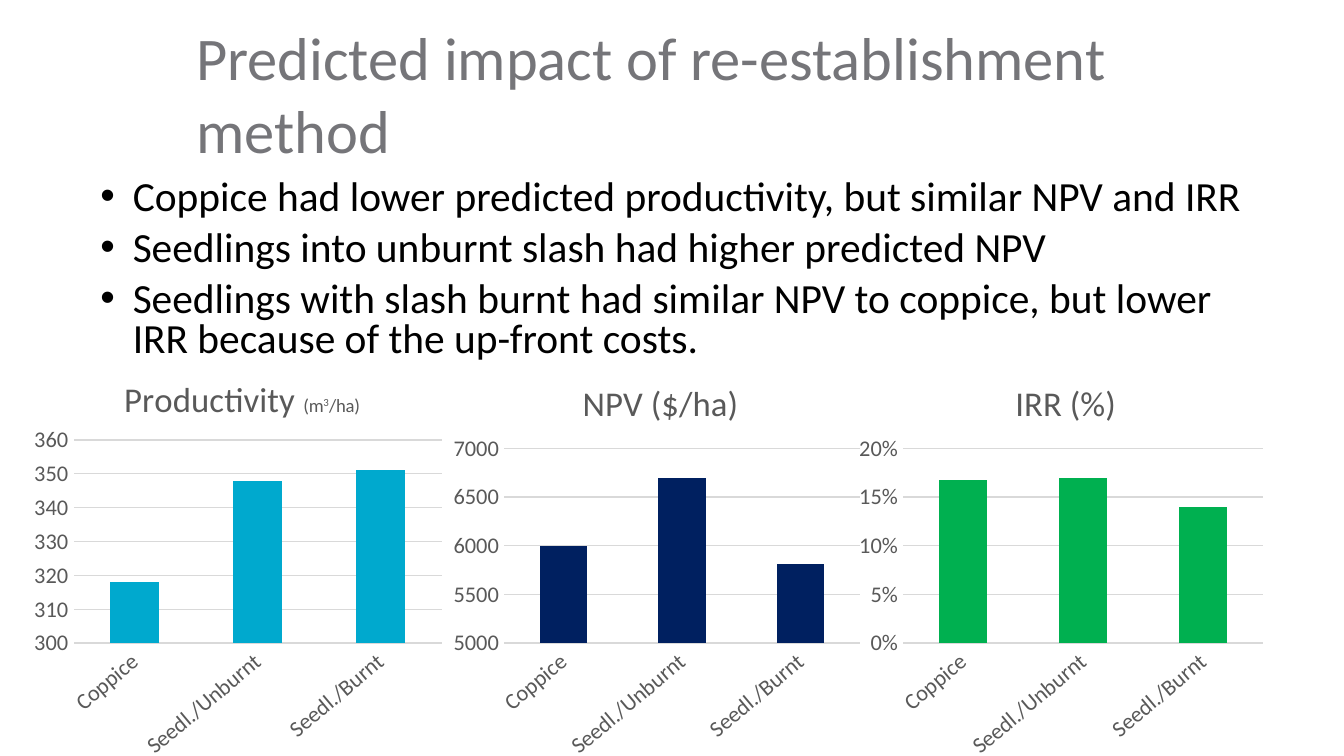
from dataclasses import dataclass

from lxml.etree import SubElement
from pptx import Presentation
from pptx.chart.data import CategoryChartData
from pptx.dml.color import RGBColor
from pptx.enum.chart import XL_CHART_TYPE as ChartType, XL_TICK_MARK as Tick
from pptx.oxml.ns import qn
from pptx.util import Cm, Pt


@dataclass(frozen=True)
class Theme:
    font: str = "Calibri"
    heading: str = "757579"
    body: str = "000000"
    label: str = "595959"
    grid: str = "D9D9D9"
    teal: str = "00A9CE"
    navy: str = "002060"
    green: str = "00B050"
    heading_size: float = 32.4
    body_size: float = 22.2
    chart_title_size: float = 18.6
    unit_size: float = 10
    label_size: float = 12


class SlideBuilder:
    def __init__(self, slide, theme):
        self.slide = slide
        self.theme = theme

    def style(self, font, size, color):
        font.name = self.theme.font
        font.size = Pt(size)
        font.bold = False
        font.color.rgb = RGBColor.from_string(color)

    def text_frame(self, left, top, width, height):
        box = self.slide.shapes.add_textbox(Cm(left), Cm(top), Cm(width), Cm(height))
        frame = box.text_frame
        frame.word_wrap = True
        frame.margin_left = frame.margin_right = 0
        frame.margin_top = frame.margin_bottom = 0
        return frame

    def heading(self, wording, *place):
        paragraph = self.text_frame(*place).paragraphs[0]
        paragraph.text = wording
        self.style(paragraph.font, self.theme.heading_size, self.theme.heading)

    def bullets(self, points, *place):
        frame = self.text_frame(*place)
        for index, point in enumerate(points):
            paragraph = frame.add_paragraph() if index else frame.paragraphs[0]
            paragraph.text = point
            paragraph.line_spacing = 0.8
            if index:
                paragraph.space_before = Pt(6)
            properties = paragraph._p.get_or_add_pPr()
            properties.set("marL", str(Cm(0.61)))
            properties.set("indent", str(Cm(-0.61)))
            SubElement(properties, qn("a:buFont"), typeface="Arial")
            SubElement(properties, qn("a:buChar"), char="•")
            self.style(paragraph.font, self.theme.body_size, self.theme.body)

    def arrange(self, part, index, inner=False, **fractions):
        layout = part.find(qn("c:layout"))
        if layout is None:
            layout = part.makeelement(qn("c:layout"))
            part.insert(index, layout)
        manual = SubElement(layout, qn("c:manualLayout"))
        if inner:
            SubElement(manual, qn("c:layoutTarget"), val="inner")
        for side in ("x", "y"):
            SubElement(manual, qn(f"c:{side}Mode"), val="edge")
        for side, fraction in fractions.items():
            SubElement(manual, qn(f"c:{side}"), val=str(fraction))

    def chart_title(self, chart, title_runs, left):
        paragraph = chart.chart_title.text_frame.paragraphs[0]
        for wording, size, baseline in title_runs:
            run = paragraph.add_run()
            run.text = wording
            self.style(run.font, size, self.theme.label)
            if baseline:
                run.font._element.set("baseline", str(baseline))
        chart.chart_title.include_in_layout = False
        self.arrange(chart.chart_title._element, 1, x=left, y=0.06)

    def axis(self, axis):
        axis.major_tick_mark = axis.minor_tick_mark = Tick.NONE
        axis.format.line.fill.background()
        self.style(axis.tick_labels.font, self.theme.label_size, self.theme.label)

    def columns(self, title_runs, title_left, values, color, scale, left, plot, number_format="General"):
        data = CategoryChartData()
        data.categories = ["Coppice", "Seedl./Unburnt", "Seedl./Burnt"]
        data.add_series("Series 1", values)
        chart = self.slide.shapes.add_chart(
            ChartType.COLUMN_CLUSTERED, Cm(left), Cm(6.55), Cm(8), Cm(8), data
        ).chart
        self.style(chart.font, 10, self.theme.body)
        chart.has_legend = False
        self.chart_title(chart, title_runs, title_left)

        bars = chart.plots[0]
        bars.gap_width = 150
        bars.vary_by_categories = False
        fill = bars.series[0].format.fill
        fill.solid()
        fill.fore_color.rgb = RGBColor.from_string(color)

        self.axis(chart.category_axis)
        label_body = chart.category_axis._element.find(qn("c:txPr")).find(qn("a:bodyPr"))
        label_body.set("rot", str(-40 * 60000))

        amounts = chart.value_axis
        self.axis(amounts)
        amounts.minimum_scale, amounts.maximum_scale, amounts.major_unit = scale
        amounts.tick_labels.number_format = number_format
        amounts.tick_labels.number_format_is_linked = False
        amounts.has_major_gridlines = True
        grid = amounts.major_gridlines.format.line
        grid.width = Pt(0.75)
        grid.color.rgb = RGBColor.from_string(self.theme.grid)

        x, y, w, h = plot
        plot_area = chart._chartSpace.chart.plotArea
        self.arrange(plot_area, 0, inner=True, x=x, y=y, w=w, h=h)


def main():
    deck = Presentation()
    deck.slide_width, deck.slide_height = Cm(25.4), Cm(14.28)
    theme = Theme()
    builder = SlideBuilder(deck.slides.add_slide(deck.slide_layouts[6]), theme)

    builder.heading("Predicted impact of re-establishment method", 3.71, 0.38, 17.4, 2.21)
    builder.bullets(
        [
            "Coppice had lower predicted productivity, but similar NPV and IRR",
            "Seedlings into unburnt slash had higher predicted NPV",
            "Seedlings with slash burnt had similar NPV to coppice, but lower "
            "IRR because of the up-front costs.",
        ],
        1.9, 3.4, 21.8, 3.4,
    )

    large, small = theme.chart_title_size, theme.unit_size
    productivity = [("Productivity ", large, 0), ("(m", small, 0), ("3", small, 30000), ("/ha)", small, 0)]
    builder.columns(productivity, 0.22, (318, 348, 351), theme.teal, (300, 360, 10),
                    0.51, (0.11, 0.22, 0.87, 0.48))
    builder.columns([("NPV ($/ha)", large, 0)], 0.31, (6000, 6700, 5810), theme.navy,
                    (5000, 7000, 500), 8.41, (0.14, 0.24, 0.84, 0.46))
    builder.columns([("IRR (%)", large, 0)], 0.38, (0.167, 0.17, 0.14), theme.green,
                    (0, 0.2, 0.05), 16.03, (0.13, 0.24, 0.85, 0.46), "0%")

    deck.save("out.pptx")


if __name__ == "__main__":
    main()
